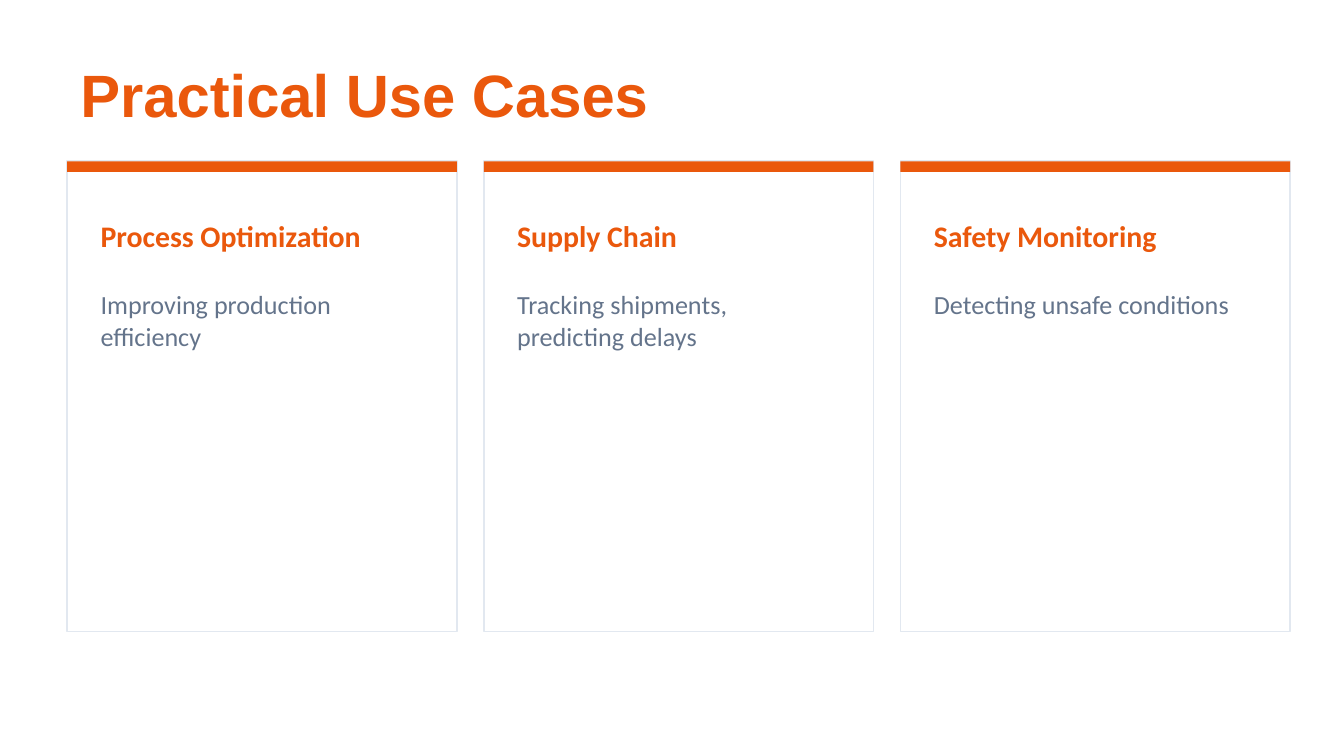
from pptx import Presentation
from pptx.dml.color import RGBColor
from pptx.enum.shapes import MSO_SHAPE as Shape
from pptx.enum.text import MSO_ANCHOR as Anchor
from pptx.util import Inches, Pt

ORANGE, SLATE, BORDER, WHITE = "EA580C", "64748B", "E2E8F0", "FFFFFF"

SLIDE_WIDTH = 10
SLIDE_HEIGHT = SLIDE_WIDTH * 9 / 16
MARGIN = 0.5
CARD_TOP, CARD_WIDTH, CARD_HEIGHT = 1.2, 2.9, 3.5
GUTTER = 0.2
PADDING = 0.15
ACCENT_HEIGHT = 0.08

USE_CASES = [
    ("Process Optimization", "Improving production efficiency"),
    ("Supply Chain", "Tracking shipments, predicting delays"),
    ("Safety Monitoring", "Detecting unsafe conditions"),
]


def color(hex_string):
    return RGBColor.from_string(hex_string)


def add_text(slide, text, box, size, ink, font="Calibri", bold=False, anchor=Anchor.MIDDLE):
    frame = slide.shapes.add_textbox(*map(Inches, box)).text_frame
    frame.word_wrap = True
    frame.vertical_anchor = anchor
    frame.text = text
    style = frame.paragraphs[0].runs[0].font
    style.name, style.size, style.bold = font, Pt(size), bold
    style.color.rgb = color(ink)


def add_panel(slide, box, fill, border=None):
    panel = slide.shapes.add_shape(Shape.RECTANGLE, *map(Inches, box))
    panel.shadow.inherit = False
    panel.fill.solid()
    panel.fill.fore_color.rgb = color(fill)
    if border:
        panel.line.color.rgb = color(border)
        panel.line.width = Pt(1)
    else:
        panel.line.fill.background()


def add_card(slide, column, heading, description):
    left = MARGIN + column * (CARD_WIDTH + GUTTER)
    text_left, text_width = left + PADDING, CARD_WIDTH - 2 * PADDING
    add_panel(slide, (left, CARD_TOP, CARD_WIDTH, CARD_HEIGHT), WHITE, BORDER)
    add_panel(slide, (left, CARD_TOP, CARD_WIDTH, ACCENT_HEIGHT), ORANGE)
    add_text(slide, heading, (text_left, CARD_TOP + 0.3, text_width, 0.5),
             16, ORANGE, bold=True)
    add_text(slide, description, (text_left, CARD_TOP + 0.9, text_width, 2.4),
             14, SLATE, anchor=Anchor.TOP)


def main():
    deck = Presentation()
    deck.slide_width, deck.slide_height = Inches(SLIDE_WIDTH), Inches(SLIDE_HEIGHT)
    slide = deck.slides.add_slide(deck.slide_layouts[6])
    slide.background.fill.solid()
    slide.background.fill.fore_color.rgb = color(WHITE)

    add_text(slide, "Practical Use Cases", (MARGIN, 0.4, SLIDE_WIDTH - 2 * MARGIN, 0.6),
             32, ORANGE, font="Arial", bold=True)
    for column, (heading, description) in enumerate(USE_CASES):
        add_card(slide, column, heading, description)

    deck.save("out.pptx")


if __name__ == "__main__":
    main()
